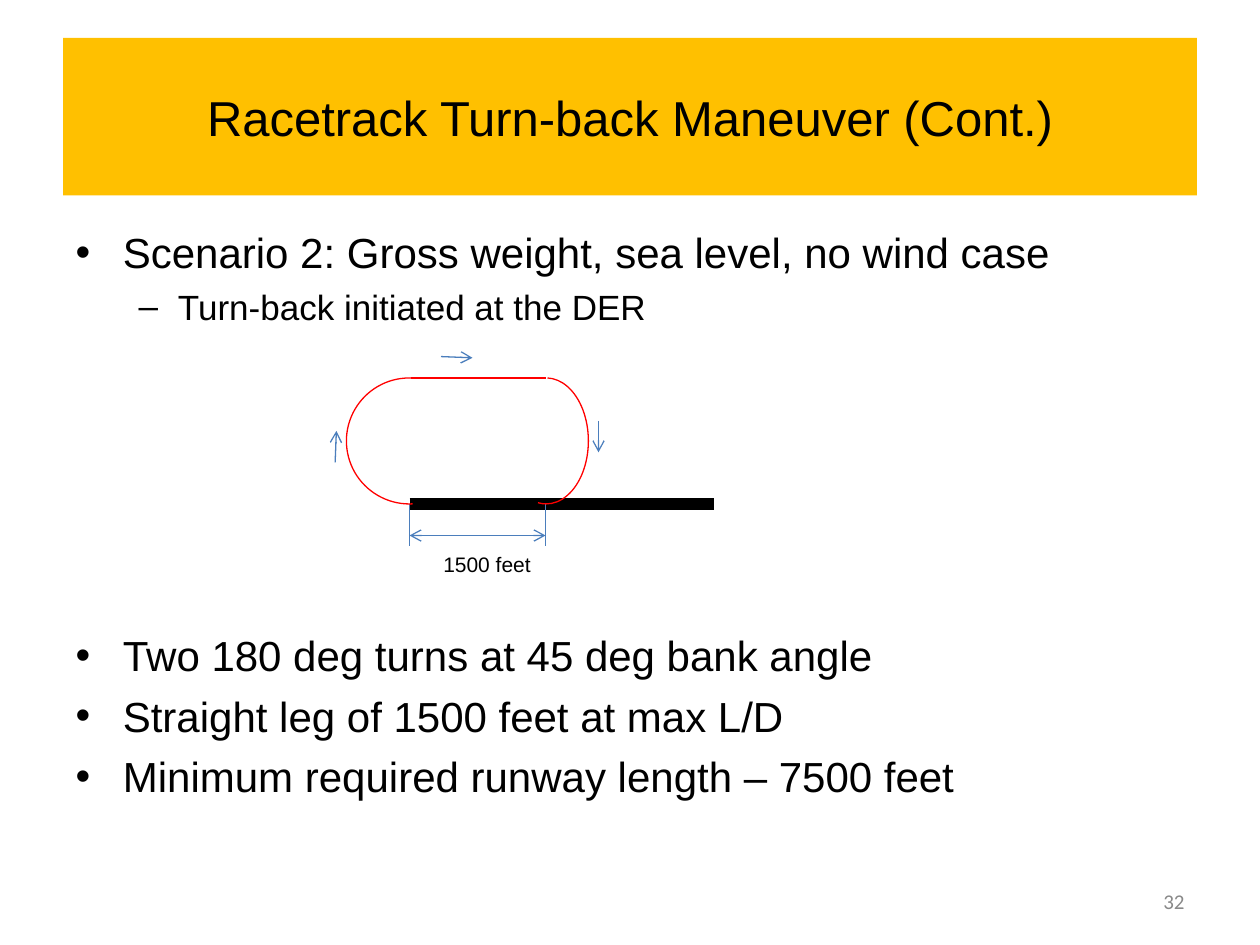
from lxml import etree
from pptx import Presentation
from pptx.dml.color import RGBColor
from pptx.enum.shapes import MSO_CONNECTOR, MSO_SHAPE
from pptx.enum.text import MSO_ANCHOR, MSO_AUTO_SIZE, PP_ALIGN
from pptx.oxml.ns import qn
from pptx.util import Inches, Pt

STRAIGHT = MSO_CONNECTOR.STRAIGHT
ARC = MSO_SHAPE.ARC
MIDDLE = MSO_ANCHOR.MIDDLE
NO_AUTOFIT = MSO_AUTO_SIZE.NONE
LEFT, CENTER, RIGHT = PP_ALIGN.LEFT, PP_ALIGN.CENTER, PP_ALIGN.RIGHT

COLORS = {
    "banner": "FFC000",
    "text": "000000",
    "runway": "000000",
    "path": "FF0000",
    "guide": "4B7EBC",
    "number": "898989",
}

# Text, list level, size and space before, in points
BULLETS = [
    ("Scenario 2: Gross weight, sea level, no wind case", 0, 24, 5.8),
    ("Turn-back initiated at the DER", 1, 20, 4.8),
    ("Two 180 deg turns at 45 deg bank angle", 0, 24, 172.6),
    ("Straight leg of 1500 feet at max L/D", 0, 24, 5.8),
    ("Minimum required runway length – 7500 feet", 0, 24, 5.8),
]

RUNWAY_Y = 4
RUNWAY_START, RUNWAY_END = 3.25, 5.67
LEG_TOP, LEG_END = 3, 4.33
DIMENSION_Y, DIMENSION_MIDDLE = 4.25, 3.92

DIRECTION_ARROWS = [
    ((2.66, 3.67), (2.67, 3.42)),
    ((3.5, 2.83), (3.75, 2.84)),
    ((4.75, 3.34), (4.75, 3.59)),
]


def color(name):
    return RGBColor.from_string(COLORS[name])


class SlideBuilder:
    """Holds the slide and the style shared by its elements."""

    def __init__(self, slide, font="Arial", line_width=0.75):
        self.slide = slide
        self.font = font
        self.line_width = line_width

    def place(self, shape, left, top, width, height):
        shape.left, shape.top = Inches(left), Inches(top)
        shape.width, shape.height = Inches(width), Inches(height)

    def style(self, paragraph, size, color_name="text", font=None):
        paragraph.font.name = font or self.font
        paragraph.font.size = Pt(size)
        paragraph.font.color.rgb = color(color_name)

    def title(self, text, box):
        shape = self.slide.shapes.title
        self.place(shape, *box)
        shape.fill.solid()
        shape.fill.fore_color.rgb = color("banner")
        frame = shape.text_frame
        frame.text = text
        frame.vertical_anchor = MIDDLE
        frame.auto_size = NO_AUTOFIT
        paragraph = frame.paragraphs[0]
        paragraph.alignment = CENTER
        self.style(paragraph, 28)

    def body(self, bullets, box):
        shape = self.slide.placeholders[1]
        self.place(shape, *box)
        frame = shape.text_frame
        frame.text = "\n".join(bullet[0] for bullet in bullets)
        frame.auto_size = NO_AUTOFIT
        for paragraph, (_, level, size, space) in zip(frame.paragraphs, bullets):
            paragraph.level = level
            paragraph.space_before = Pt(space)
            self.style(paragraph, size)

    def line(self, start, end, color_name, width=None, arrow=False):
        points = [Inches(value) for value in (*start, *end)]
        connector = self.slide.shapes.add_connector(STRAIGHT, *points)
        connector.line.color.rgb = color(color_name)
        connector.line.width = Pt(width or self.line_width)
        if arrow:
            line_xml = connector.line._get_or_add_ln()
            etree.SubElement(line_xml, qn("a:tailEnd"), type="arrow")
        etree.SubElement(connector._element.spPr, qn("a:effectLst"))

    def arc(self, box, start_angle, end_angle):
        """Draw a clockwise arc with its angles in degrees."""
        shape = self.slide.shapes.add_shape(ARC, *[Inches(value) for value in box])
        shape.shadow.inherit = False
        shape.fill.background()
        shape.line.color.rgb = color("path")
        shape.line.width = Pt(self.line_width)
        for index, angle in enumerate((start_angle, end_angle)):
            shape.adjustments[index] = angle * 0.6

    def text(self, text, box, color_name="text", font=None, align=LEFT, wrap=True):
        shape = self.slide.shapes.add_textbox(*[Inches(value) for value in box])
        frame = shape.text_frame
        frame.text = text
        frame.word_wrap = wrap
        frame.vertical_anchor = MIDDLE
        paragraph = frame.paragraphs[0]
        paragraph.alignment = align
        self.style(paragraph, 12, color_name, font)


def main():
    presentation = Presentation()
    presentation.slide_width, presentation.slide_height = Inches(10), Inches(7.5)
    slide = presentation.slides.add_slide(presentation.slide_layouts[1])
    builder = SlideBuilder(slide)

    builder.title("Racetrack Turn-back Maneuver (Cont.)", (0.5, 0.3, 9, 1.25))
    builder.body(BULLETS, (0.5, 1.75, 9, 5.5))

    # Runway and the dimension of the straight leg
    builder.line((RUNWAY_START, RUNWAY_Y), (RUNWAY_END, RUNWAY_Y), "runway", 7.25)
    for x in (RUNWAY_START, LEG_END):
        builder.line((x, RUNWAY_Y), (x, 4.33), "guide")
    for x in (LEG_END, RUNWAY_START):
        builder.line((DIMENSION_MIDDLE, DIMENSION_Y), (x, DIMENSION_Y), "guide", arrow=True)
    builder.text("1500 feet", (3.42, 4.33, 0.9, 0.3), wrap=False)

    # Racetrack flight path
    builder.arc((2.75, LEG_TOP, 1, 1), 87.16, 271.54)
    builder.line((3.26, LEG_TOP), (LEG_END, LEG_TOP), "path")
    builder.arc((4, LEG_TOP, 0.67, 1), 271.23, 97.55)
    for start, end in DIRECTION_ARROWS:
        builder.line(start, end, "guide", arrow=True)

    builder.text("32", (7.17, 6.95, 2.33, 0.4), "number", "Calibri", RIGHT)
    presentation.save("out.pptx")


if __name__ == "__main__":
    main()
